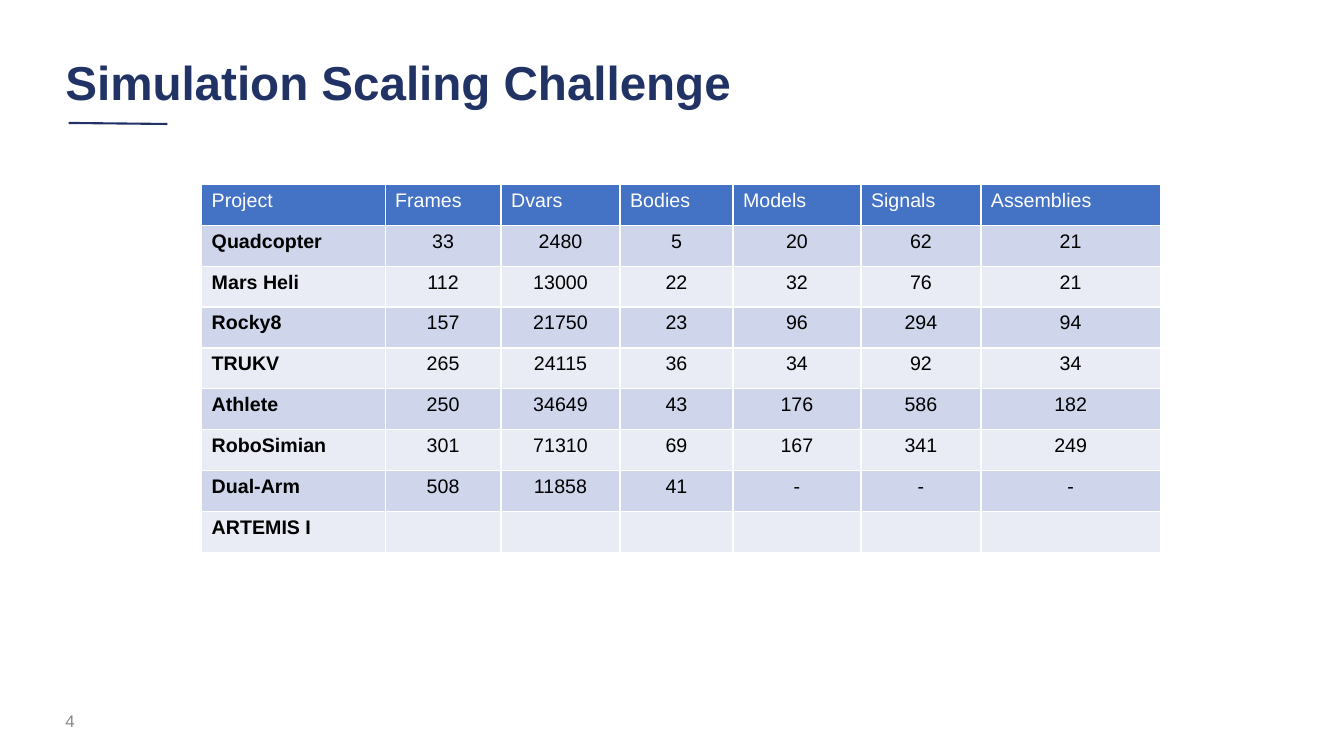
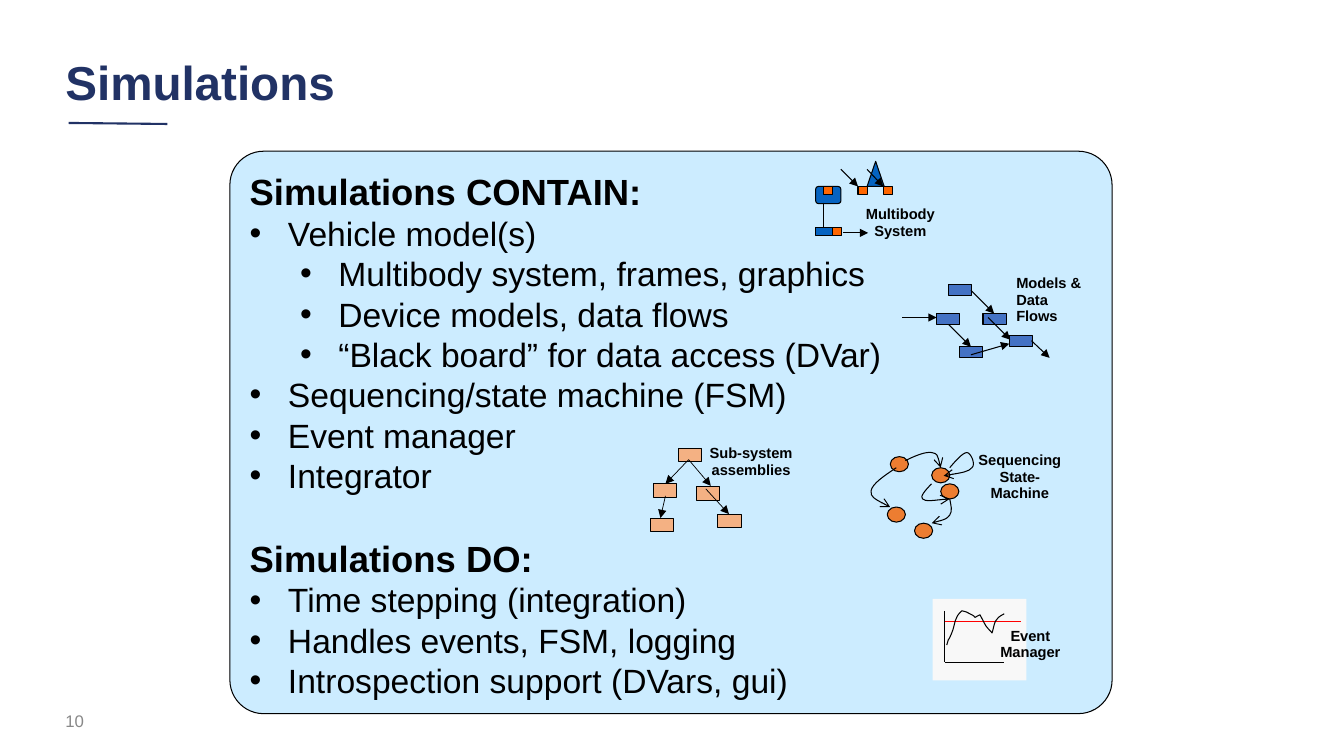
from lxml import etree
from pptx import Presentation
from pptx import util as u
from pptx.dml import color
from pptx.enum import shapes, text
from pptx.oxml.ns import qn

PX = 9144  # EMU per px, 100 px to the inch
FONT = "Arial"
NAVY, GREY, BLACK, WHITE = "213265", "888888", "000000", "FFFFFF"
BLUE, ORANGE, PEACH = "4472C4", "ED7D31", "F4B183"
MARINE, SIGNAL = "0563C1", "FF6600"
BANDS = ["E9EBF5", "CFD5EA"]
RECT = shapes.MSO_SHAPE.RECTANGLE
ROUND = shapes.MSO_SHAPE.ROUNDED_RECTANGLE
OVAL = shapes.MSO_SHAPE.OVAL
TRIANGLE = shapes.MSO_SHAPE.ISOSCELES_TRIANGLE


def style(shape, line=BLACK, width=0.75, fill=None, arrow=None):
    """Set outline, fill and arrowhead, and switch the shadow off."""
    if line:
        shape.line.color.rgb = color.RGBColor.from_string(line)
        shape.line.width = u.Pt(width)
    else:
        shape.line.fill.background()
    if fill:
        shape.fill.solid()
        shape.fill.fore_color.rgb = color.RGBColor.from_string(fill)
    properties = shape.element.spPr
    if arrow:
        etree.SubElement(properties.find(qn("a:ln")), qn("a:tailEnd"), type=arrow)
    etree.SubElement(properties, qn("a:effectLst"))


def write(paragraph, words, size, ink=BLACK, bold=False):
    """Add one run of text."""
    run = paragraph.add_run()
    run.text = words
    run.font.name = FONT
    run.font.size = u.Pt(size)
    run.font.bold = bold
    run.font.color.rgb = color.RGBColor.from_string(ink)


presentation = Presentation()
presentation.slide_width = 1333 * PX
presentation.slide_height = 750 * PX

# Shared frame: title rule, page number, title
slides = []
for title, number in [("Simulation Scaling Challenge", "4"), ("Simulations", "10")]:
    slide = presentation.slides.add_slide(presentation.slide_layouts[6])
    slides.append(slide)
    rule = slide.shapes.add_connector(
        shapes.MSO_CONNECTOR.STRAIGHT, 68 * PX, 122 * PX, 166 * PX, 123 * PX)
    style(rule, NAVY, 1.5)
    for words, top, width, height, size, ink, bold, spacing in [
        (number, 695, 300, 40, 12, GREY, False, 1.0),
        (title, 46, 1112, 76, 34, NAVY, True, 0.9),
    ]:
        box = slide.shapes.add_textbox(55 * PX, top * PX, width * PX, height * PX)
        box.text_frame.word_wrap = True
        box.text_frame.vertical_anchor = text.MSO_ANCHOR.MIDDLE
        paragraph = box.text_frame.paragraphs[0]
        paragraph.line_spacing = spacing
        write(paragraph, words, size, ink, bold)

# Slide 1: project table
rows = [
    ["Project", "Frames", "Dvars", "Bodies", "Models", "Signals", "Assemblies"],
    ["Quadcopter", "33", "2480", "5", "20", "62", "21"],
    ["Mars Heli", "112", "13000", "22", "32", "76", "21"],
    ["Rocky8", "157", "21750", "23", "96", "294", "94"],
    ["TRUKV", "265", "24115", "36", "34", "92", "34"],
    ["Athlete", "250", "34649", "43", "176", "586", "182"],
    ["RoboSimian", "301", "71310", "69", "167", "341", "249"],
    ["Dual-Arm", "508", "11858", "41", "-", "-", "-"],
    ["ARTEMIS I", "", "", "", "", "", ""],
]
widths = [182, 115, 118, 112, 127, 119, 178]
table = slides[0].shapes.add_table(
    len(rows), len(widths), 200 * PX, 183 * PX, sum(widths) * PX, 365 * PX).table
for column, width in zip(table.columns, widths):
    column.width = width * PX
for row_index, row in enumerate(rows):
    header = row_index == 0
    for column_index, words in enumerate(row):
        cell = table.cell(row_index, column_index)
        cell.fill.solid()
        cell.fill.fore_color.rgb = color.RGBColor.from_string(
            BLUE if header else BANDS[row_index % 2])
        paragraph = cell.text_frame.paragraphs[0]
        if not header and column_index:
            paragraph.alignment = text.PP_ALIGN.CENTER
        if words:
            write(paragraph, words, 14, WHITE if header else BLACK,
                  not header and column_index == 0)

# Slide 2: panel with the two lists
slide = slides[1]
panel = slide.shapes.add_shape(ROUND, 228 * PX, 150 * PX, 875 * PX, 558 * PX)
panel.adjustments[0] = 0.06
style(panel, fill="CCECFF")
frame = panel.text_frame
frame.word_wrap = False
frame.vertical_anchor = text.MSO_ANCHOR.TOP
frame.margin_top = 8 * PX
panel_lines = [
    ("Simulations CONTAIN:", None),
    ("Vehicle model(s)", 0),
    ("Multibody system, frames, graphics", 1),
    ("Device models, data flows", 1),
    ("“Black board” for data access (DVar)", 1),
    ("Sequencing/state machine (FSM)", 0),
    ("Event manager", 0),
    ("Integrator", 0),
    ("Simulations DO:", None),
    ("Time stepping (integration)", 0),
    ("Handles events, FSM, logging", 0),
    ("Introspection support (DVars, gui)", 0),
]
for index, (words, level) in enumerate(panel_lines):
    heading = level is None
    paragraph = frame.add_paragraph() if index else frame.paragraphs[0]
    paragraph.alignment = text.PP_ALIGN.LEFT
    if heading:
        if index:
            paragraph.space_before = u.Pt(29)
    else:
        paragraph.level = level
        properties = paragraph._p.get_or_add_pPr()
        properties.set("marL", str((38 + 50 * level) * PX))
        properties.set("indent", str(-38 * PX))
        etree.SubElement(properties, qn("a:buFont"), typeface=FONT)
        etree.SubElement(properties, qn("a:buChar"), char="•")
        paragraph.line_spacing = u.Pt(28.8)
    write(paragraph, words, 26 if heading else 24, bold=heading)

# Small diagrams: nodes as (preset, fill, width, height, positions)
state_nodes = [(OVAL, ORANGE, 18, 15,
                [(883, 453), (924, 464), (933, 480), (880, 503), (907, 519)])]
multibody_nodes = [
    (ROUND, MARINE, 25, 17, [(809, 185)]),
    (RECT, MARINE, 17, 8, [(809, 226)]),
    (TRIANGLE, MARINE, 17, 25, [(860, 160)]),
    (RECT, SIGNAL, 9, 8, [(817, 185), (826, 226), (851, 185), (876, 185)]),
]
model_nodes = [(RECT, BLUE, 23, 11,
                [(929, 311), (941, 282), (952, 344), (975, 311), (1001, 333)])]
assembly_nodes = [(RECT, PEACH, 23, 13,
                   [(648, 480), (673, 445), (691, 483), (712, 510), (645, 514)])]
event_nodes = [(RECT, "F8F8F8", 93, 81, [(925, 594)])]

# Links as (from x, from y, to x, to y, colour, arrowhead)
multibody_links = [(817, 201, 817, 226, BLACK, None)] + [
    (*ends, BLACK, "triangle") for ends in [
        (836, 231, 861, 231), (834, 168, 851, 185), (860, 168, 876, 185)]]
model_links = [(*ends, BLACK, "triangle") for ends in [
    (895, 315, 929, 315), (941, 322, 963, 344), (980, 315, 1002, 337),
    (963, 352, 1001, 341), (1023, 338, 1041, 355), (963, 288, 986, 311)]]
assembly_links = [(*ends, BLACK, "triangle") for ends in [
    (683, 456, 660, 480), (660, 492, 655, 514),
    (700, 485, 723, 510), (683, 456, 705, 482)]]
event_links = [(937, 606, 937, 657, BLACK, None), (937, 657, 996, 657, BLACK, None),
               (937, 617, 1013, 617, "FF0000", None)]

for nodes, links, outline, width in [
    (state_nodes, [], BLACK, 0.75),
    (event_nodes, event_links, None, 0.75),
    (multibody_nodes, multibody_links, BLACK, 0.75),
    (model_nodes, model_links, BLACK, 0.75),
    (assembly_nodes, assembly_links, BLACK, 0.5),
]:
    for preset, fill, node_width, node_height, positions in nodes:
        for left, top in positions:
            node = slide.shapes.add_shape(
                preset, left * PX, top * PX, node_width * PX, node_height * PX)
            style(node, outline, width, fill)
    for x1, y1, x2, y2, ink, arrow in links:
        link = slide.shapes.add_connector(
            shapes.MSO_CONNECTOR.STRAIGHT, x1 * PX, y1 * PX, x2 * PX, y2 * PX)
        style(link, ink, width, arrow=arrow)

# Curves: a start point, then three points for each cubic segment
transitions = [
    [(898, 457), (908, 452), (918, 448), (924, 449), (930, 450), (932, 457), (933, 464)],
    [(889, 464), (877, 472), (865, 480), (864, 487), (863, 493), (873, 498), (883, 503)],
    [(942, 464), (948, 457), (955, 449), (959, 449), (963, 449), (968, 461), (964, 464),
     (961, 468), (948, 470), (936, 472)],
    [(924, 480), (918, 486), (912, 493), (915, 495), (918, 498), (937, 495), (942, 495)],
    [(942, 495), (943, 501), (945, 507), (942, 511), (939, 515), (932, 517), (924, 519)],
]
signal = [(939, 640), (943, 627), (938, 642), (944, 628), (948, 618), (946, 613),
          (954, 606), (957, 607), (960, 607), (962, 609), (971, 613), (963, 614),
          (972, 610), (980, 625), (976, 619), (984, 628), (987, 617), (986, 614),
          (996, 609)]
for points, arrow in [(points, "arrow") for points in transitions] + [(signal, None)]:
    builder = slide.shapes.build_freeform(*points[0], scale=PX)
    builder.add_line_segments(points[1:], close=False)
    curve = builder.convert_to_shape()
    curve.fill.background()
    style(curve, arrow=arrow)
    outline = next(curve.element.iter(qn("a:path")))
    segments = outline.findall(qn("a:lnTo"))
    for start in range(0, len(segments), 3):
        cubic = etree.SubElement(outline, qn("a:cubicBezTo"))
        for segment in segments[start:start + 3]:
            cubic.append(segment[0])
            outline.remove(segment)

# Diagram labels
center, left_aligned = text.PP_ALIGN.CENTER, text.PP_ALIGN.LEFT
for left, top, width, height, alignment, lines in [
    (975, 619, 94, 41, center, ["Event", "Manager"]),
    (849, 201, 88, 41, center, ["Multibody", "System"]),
    (1001, 269, 84, 58, left_aligned, ["Models &", "Data Flows"]),
    (957, 445, 109, 58, center, ["Sequencing", "State-Machine"]),
    (693, 438, 104, 41, center, ["Sub-system", "assemblies"]),
]:
    label = slide.shapes.add_textbox(left * PX, top * PX, width * PX, height * PX)
    frame = label.text_frame
    frame.word_wrap = True
    frame.margin_left = frame.margin_right = 7 * PX
    frame.margin_top = frame.margin_bottom = 4 * PX
    for index, words in enumerate(lines):
        paragraph = frame.add_paragraph() if index else frame.paragraphs[0]
        paragraph.alignment = alignment
        paragraph.line_spacing = 0.94
        write(paragraph, words, 10.5, bold=True)

presentation.save("out.pptx")
